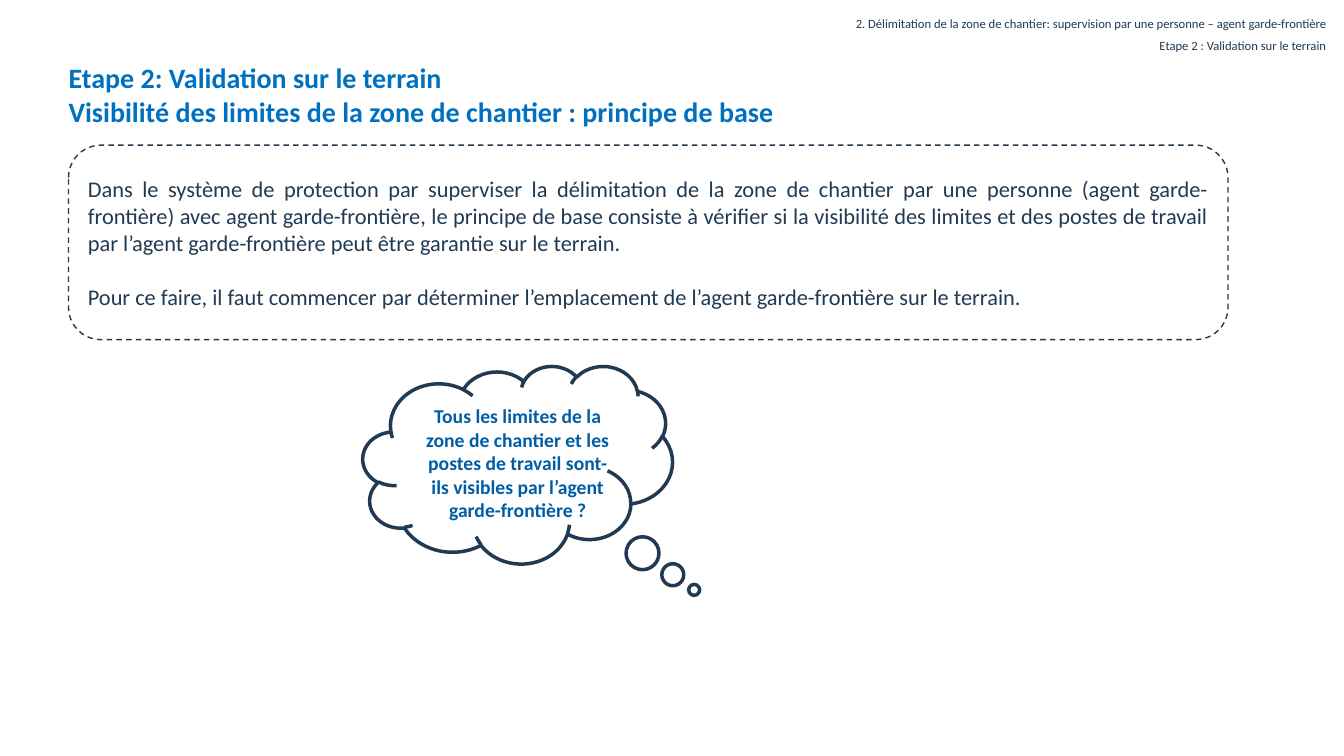
import pptx
import pptx.util
import pptx.dml.color
import pptx.enum.dml
import pptx.enum.shapes
import pptx.enum.text

Inches = pptx.util.Inches
Pt = pptx.util.Pt
Align = pptx.enum.text.PP_ALIGN
Anchor = pptx.enum.text.MSO_ANCHOR
Preset = pptx.enum.shapes.MSO_SHAPE

NAVY = pptx.dml.color.RGBColor(0x21, 0x3A, 0x53)
BLUE = pptx.dml.color.RGBColor(0x00, 0x5D, 0xA4)
TITLE_BLUE = pptx.dml.color.RGBColor(0x00, 0x70, 0xC0)


def write_text(frame, paragraphs, size, color, bold=False, align=Align.LEFT,
               anchor=Anchor.TOP, gap=0, line_spacing=1.0, margins=None):
    frame.word_wrap = True
    frame.auto_size = pptx.enum.text.MSO_AUTO_SIZE.NONE
    frame.vertical_anchor = anchor
    if margins is not None:
        frame.margin_left = frame.margin_right = Inches(margins)
        frame.margin_top = frame.margin_bottom = Inches(margins)
    for index, text in enumerate(paragraphs):
        paragraph = frame.add_paragraph() if index else frame.paragraphs[0]
        paragraph.alignment = align
        paragraph.line_spacing = line_spacing
        paragraph.space_before = Pt(gap if index else 0)
        run = paragraph.add_run()
        run.text = text
        run.font.name = "Calibri"
        run.font.size = Pt(size)
        run.font.bold = bold
        run.font.color.rgb = color


def add_outline(slide, preset, left, top, width, height, weight):
    outline = slide.shapes.add_shape(
        preset, Inches(left), Inches(top), Inches(width), Inches(height))
    outline.shadow.inherit = False
    outline.fill.background()
    outline.line.color.rgb = NAVY
    outline.line.width = Pt(weight)
    return outline


def add_label(slide, left, top, width, height, paragraphs, **text_format):
    label = slide.shapes.add_textbox(
        Inches(left), Inches(top), Inches(width), Inches(height))
    write_text(label.text_frame, paragraphs, **text_format)


def set_title(slide, left, top, width, height, paragraphs, **text_format):
    title = slide.shapes.title
    title.left, title.top = Inches(left), Inches(top)
    title.width, title.height = Inches(width), Inches(height)
    write_text(title.text_frame, paragraphs, **text_format)


def main():
    deck = pptx.Presentation()
    deck.slide_width = Inches(13.33)
    deck.slide_height = Inches(7.5)
    slide = deck.slides.add_slide(deck.slide_layouts.get_by_name("Title Only"))

    set_title(slide, 0.68, 0.6, 10.12, 0.55, [
        "Etape 2: Validation sur le terrain",
        "Visibilité des limites de la zone de chantier : principe de base",
    ], size=20, color=TITLE_BLUE, bold=True, margins=0)

    thought = add_outline(slide, Preset.CLOUD_CALLOUT, 3.6, 3.63, 3.07, 1.96, 2.5)
    thought.adjustments[0] = 0.57
    thought.adjustments[1] = 0.634

    principle = add_outline(slide, Preset.ROUNDED_RECTANGLE, 0.68, 1.44, 11.5, 1.93, 1)
    principle.line.dash_style = pptx.enum.dml.MSO_LINE.DASH
    write_text(principle.text_frame, [
        "Dans le système de protection par superviser la délimitation de la zone "
        "de chantier par une personne (agent garde-frontière) avec agent "
        "garde-frontière, le principe de base consiste à vérifier si la visibilité "
        "des limites et des postes de travail par l’agent garde-frontière peut être "
        "garantie sur le terrain.",
        "Pour ce faire, il faut commencer par déterminer l’emplacement de l’agent "
        "garde-frontière sur le terrain.",
    ], size=16, color=NAVY, align=Align.JUSTIFY, anchor=Anchor.MIDDLE, gap=19.5)

    add_label(slide, 4.07, 3.96, 2.13, 1.28, [
        "Tous les limites de la zone de chantier et les postes de travail sont-ils "
        "visibles par l’agent garde-frontière ?",
    ], size=14, color=BLUE, bold=True, align=Align.CENTER)

    add_label(slide, 8.24, 0.13, 5.01, 0.39, [
        "2. Délimitation de la zone de chantier: supervision par une personne – "
        "agent garde-frontière",
        "Etape 2 : Validation sur le terrain",
    ], size=9, color=NAVY, align=Align.RIGHT, gap=5.6, line_spacing=0.9)

    deck.save("out.pptx")


if __name__ == "__main__":
    main()
